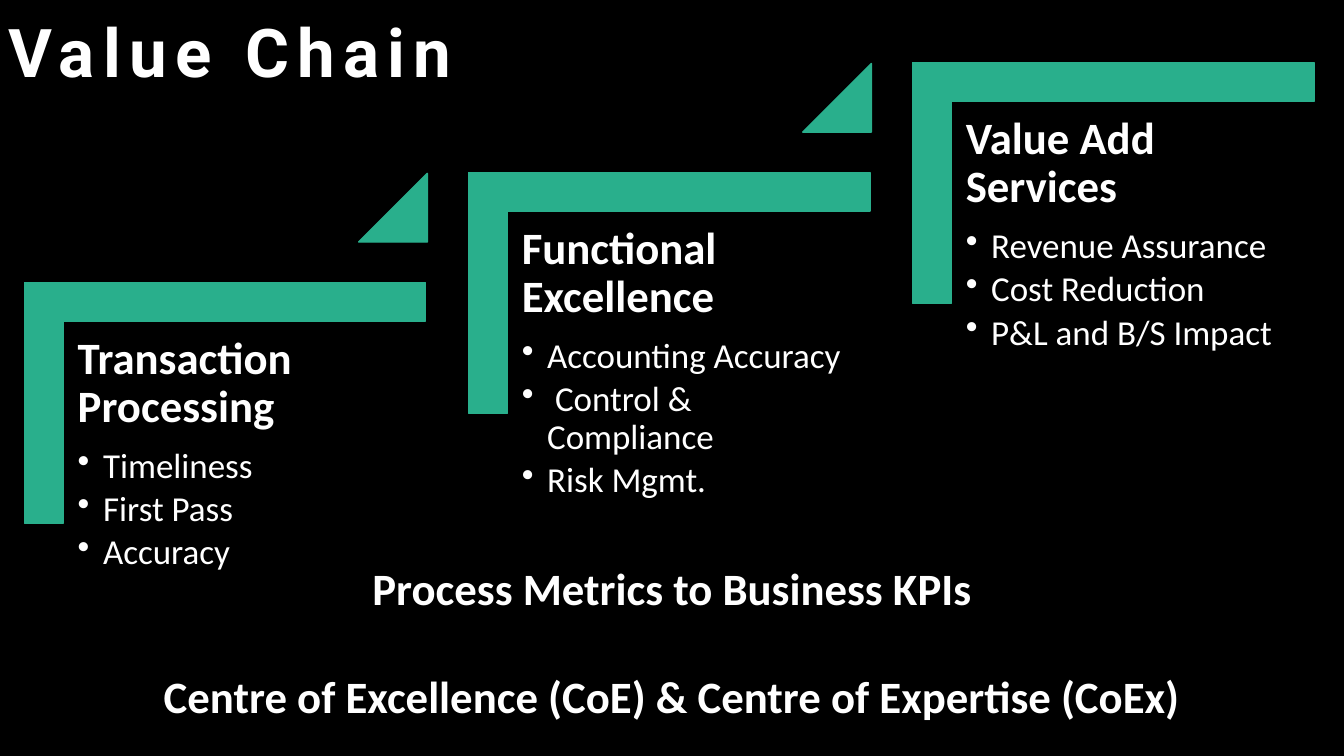
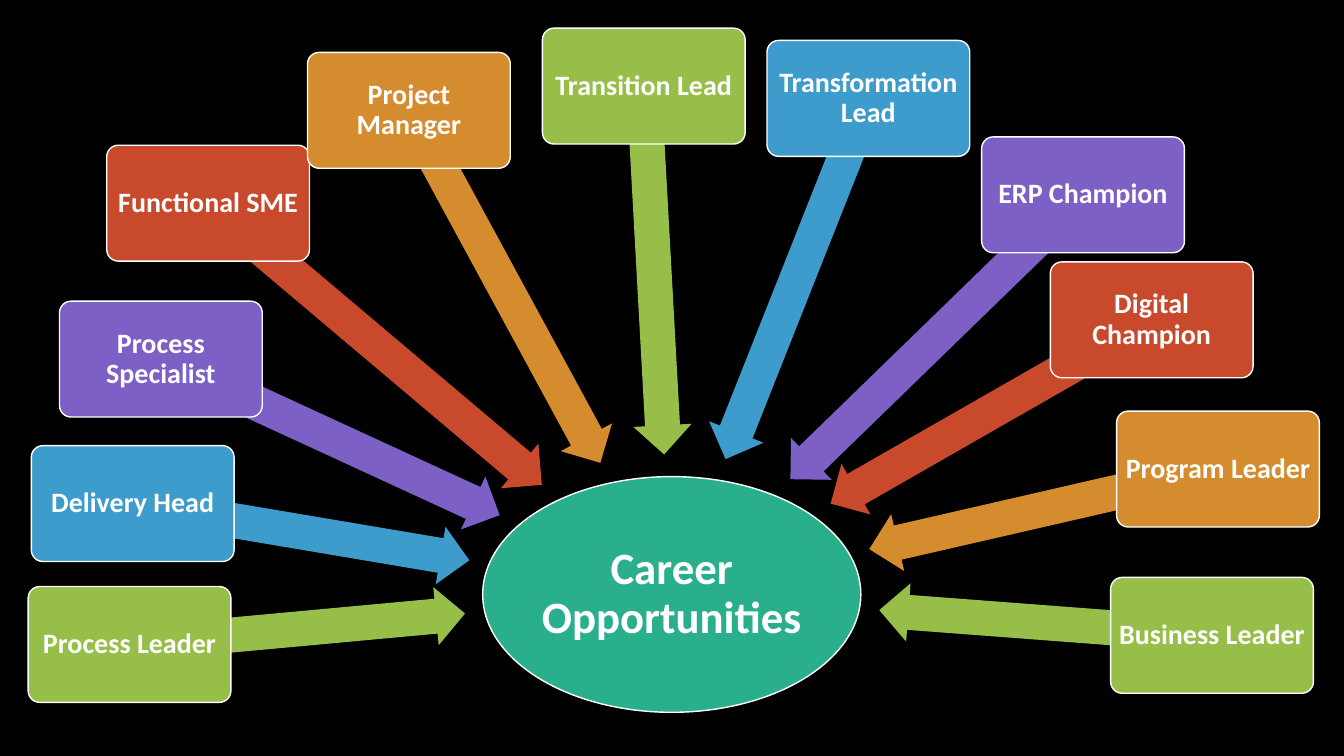
import itertools
import math

import pptx
import pptx.dml.color
import pptx.enum.shapes
import pptx.enum.text
import pptx.oxml.ns
import pptx.util
from lxml import etree
from pptx.util import Cm, Pt

RGBColor = pptx.dml.color.RGBColor
Shape = pptx.enum.shapes.MSO_SHAPE
Align = pptx.enum.text.PP_ALIGN
Anchor = pptx.enum.text.MSO_ANCHOR

BLACK = RGBColor(0x00, 0x00, 0x00)
WHITE = RGBColor(0xFF, 0xFF, 0xFF)
TEAL = RGBColor(0x29, 0xAF, 0x8C)
GREEN = RGBColor(0x97, 0xBE, 0x49)
BLUE = RGBColor(0x3D, 0x9C, 0xCC)
PURPLE = RGBColor(0x7C, 0x60, 0xC6)
RED = RGBColor(0xC9, 0x49, 0x2C)
ORANGE = RGBColor(0xD5, 0x8C, 0x2E)
ROLE_COLORS = (GREEN, BLUE, PURPLE, RED, ORANGE)

TITLE_FONT = "Roboto"
BODY_FONT = "Calibri"
TITLE_ONLY, BLANK = 5, 6

STEPS = (
    ("Transaction Processing", ("Timeliness", "First Pass", "Accuracy")),
    ("Functional Excellence",
     ("Accounting Accuracy", " Control & Compliance", "Risk Mgmt.")),
    ("Value Add Services",
     ("Revenue Assurance", "Cost Reduction", "P&L and B/S Impact")),
)
STEP_RIGHT, STEP_UP = 11.19, 2.77

# Role name with the left and top of its card, in centimetres
ROLES = (
    ("Process Leader", 0.71, 14.78),
    ("Delivery Head", 0.79, 11.23),
    ("Process Specialist", 1.5, 7.59),
    ("Functional SME", 2.69, 3.66),
    ("Project Manager", 7.75, 1.32),
    ("Transition Lead", 13.67, 0.71),
    ("Transformation Lead", 19.33, 1.02),
    ("ERP Champion", 24.74, 3.45),
    ("Digital Champion", 26.47, 6.6),
    ("Program Leader", 28.14, 10.36),
    ("Business Leader", 27.99, 14.55),
)
CARD_WIDTH, CARD_HEIGHT = 5.11, 2.92
HUB_X, HUB_Y, HUB_WIDTH, HUB_HEIGHT = 16.93, 14.98, 9.53, 5.94
# Half axes of the ellipse around the hub on which the arrow tips lie
TIP_X, TIP_Y = 5.26, 3.53
ARROW_THICKNESS = 1.47


class SlideWriter:
    """Holds the deck, its style and the current slide; lengths are centimetres."""

    def __init__(self):
        self.deck = pptx.Presentation()
        self.deck.slide_width, self.deck.slide_height = Cm(33.87), Cm(19.05)
        background = self.deck.slide_master.background.fill
        background.solid()
        background.fore_color.rgb = BLACK
        self.slide = None

    def new_slide(self, layout):
        self.slide = self.deck.slides.add_slide(self.deck.slide_layouts[layout])

    def style(self, para, size, bold=True, font=BODY_FONT):
        para.font.name = font
        para.font.size = Pt(size)
        para.font.bold = bold
        para.font.color.rgb = WHITE

    def title(self, text):
        title = self.slide.shapes.title
        title.left, title.top = Cm(-0.05), Cm(0.13)
        title.width, title.height = Cm(33.88), Cm(2.31)
        frame = title.text_frame
        frame.auto_size = pptx.enum.text.MSO_AUTO_SIZE.NONE
        frame.vertical_anchor = Anchor.TOP
        para = frame.paragraphs[0]
        para.alignment = Align.LEFT
        span = para.add_run()
        span.text = text
        span.font._element.set("spc", "600")
        self.style(para, 48, font=TITLE_FONT)

    def shape(self, kind, left, top, width, height, fill, outline=None,
              adjustments=(), rotation=0):
        shape = self.slide.shapes.add_shape(
            kind, Cm(left), Cm(top), Cm(width), Cm(height))
        shape.shadow.inherit = False
        shape.rotation = rotation
        for index, value in enumerate(adjustments):
            shape.adjustments[index] = value
        shape.fill.solid()
        shape.fill.fore_color.rgb = fill
        if outline is None:
            shape.line.fill.background()
        else:
            shape.line.color.rgb = outline
            shape.line.width = Pt(1)
        return shape

    def label(self, shape, text, size, inset):
        frame = shape.text_frame
        self.set_insets(frame, inset)
        frame.word_wrap = True
        frame.vertical_anchor = Anchor.MIDDLE
        para = frame.paragraphs[0]
        para.text = text
        para.alignment = Align.CENTER
        para.line_spacing = 0.9
        self.style(para, size)

    def set_insets(self, frame, inset):
        frame.margin_left = frame.margin_right = Cm(inset)
        frame.margin_top = frame.margin_bottom = Cm(inset)

    def text_box(self, left, top, width, height):
        box = self.slide.shapes.add_textbox(
            Cm(left), Cm(top), Cm(width), Cm(height))
        box.text_frame.word_wrap = True
        return box.text_frame

    def heading_with_bullets(self, left, top, width, height, heading, items):
        frame = self.text_box(left, top, width, height)
        self.set_insets(frame, 0.33)
        para = frame.paragraphs[0]
        para.text = heading
        para.line_spacing = 0.9
        para.space_after = Pt(11)
        self.style(para, 32)
        for item in items:
            para = frame.add_paragraph()
            para.text = item
            self.bullet(para)
            para.line_spacing = 0.9
            para.space_after = Pt(4)
            self.style(para, 25, bold=False)

    def bullet(self, para):
        properties = para._p.get_or_add_pPr()
        properties.set("marL", str(Cm(0.64)))
        properties.set("indent", str(-Cm(0.64)))
        mark = etree.SubElement(properties, pptx.oxml.ns.qn("a:buChar"))
        mark.set("char", "•")

    def centred_lines(self, left, top, width, height, lines, gap):
        frame = self.text_box(left, top, width, height)
        for index, line in enumerate(lines):
            para = frame.add_paragraph() if index else frame.paragraphs[0]
            para.text = line
            para.alignment = Align.CENTER
            if index:
                para.space_before = Pt(gap)
            self.style(para, 32)

    def arrow_to_hub(self, start_x, start_y, fill):
        """Draw an arrow aimed at the hub's centre that stops just outside it."""
        run, rise = HUB_X - start_x, HUB_Y - start_y
        distance = math.hypot(run, rise)
        length = distance * (1 - 1 / math.hypot(run / TIP_X, rise / TIP_Y))
        share = length / distance / 2
        middle_x, middle_y = start_x + run * share, start_y + rise * share
        self.shape(Shape.RIGHT_ARROW, middle_x - length / 2,
                   middle_y - ARROW_THICKNESS / 2, length, ARROW_THICKNESS, fill,
                   adjustments=(0.6, 0.5),
                   rotation=math.degrees(math.atan2(rise, run)))


def add_value_chain(writer):
    writer.new_slide(TITLE_ONLY)
    writer.title("Value Chain")
    for index, (heading, items) in enumerate(STEPS):
        right, up = index * STEP_RIGHT, index * STEP_UP
        writer.shape(Shape.CORNER, 2.64 + right, 5.1 - up, 6.07, 10.11, TEAL, TEAL,
                     adjustments=(0.16, 0.16), rotation=90)
        writer.heading_with_bullets(1.63 + right, 8.13 - up, 9.14, 8, heading, items)
        if index < len(STEPS) - 1:
            writer.shape(Shape.ISOSCELES_TRIANGLE, 9.04 + right, 4.37 - up,
                         1.73, 1.73, TEAL, TEAL, adjustments=(1,))
    writer.centred_lines(
        3.07, 14, 27.74, 4.37,
        ("Process Metrics to Business KPIs",
         "Centre of Excellence (CoE) & Centre of Expertise (CoEx)"), gap=39)


def add_career_opportunities(writer):
    writer.new_slide(BLANK)
    hub = writer.shape(Shape.OVAL, HUB_X - HUB_WIDTH / 2, HUB_Y - HUB_HEIGHT / 2,
                       HUB_WIDTH, HUB_HEIGHT, TEAL, WHITE)
    writer.label(hub, "Career Opportunities", 32, inset=0.05)
    for (role, left, top), color in zip(ROLES, itertools.cycle(ROLE_COLORS)):
        writer.arrow_to_hub(left + CARD_WIDTH / 2, top + CARD_HEIGHT / 2, color)
        card = writer.shape(Shape.ROUNDED_RECTANGLE, left, top, CARD_WIDTH,
                            CARD_HEIGHT, color, WHITE, adjustments=(0.1,))
        writer.label(card, role, 20, inset=0.1)


def main():
    writer = SlideWriter()
    add_value_chain(writer)
    add_career_opportunities(writer)
    writer.deck.save("out.pptx")


if __name__ == "__main__":
    main()
